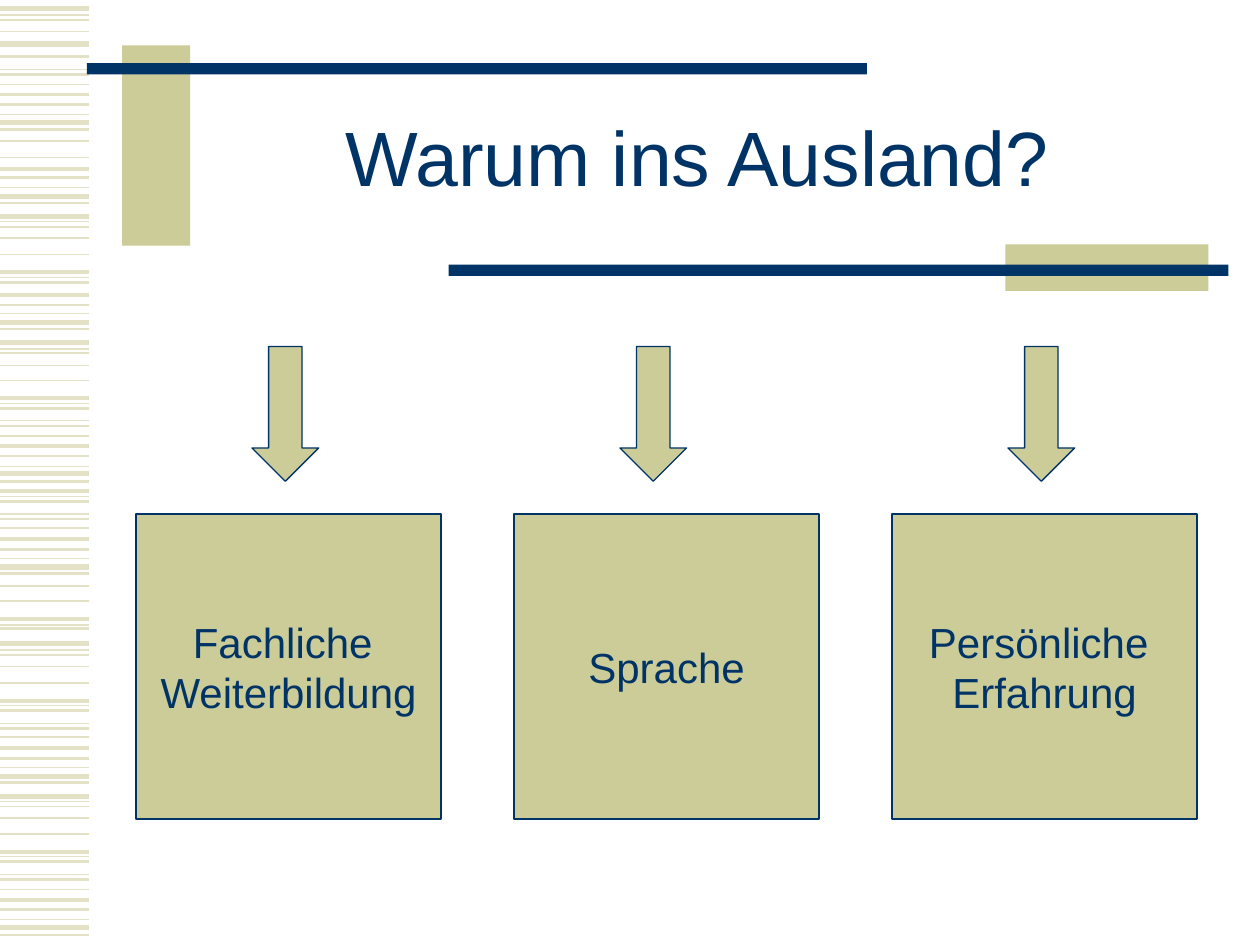
"""Builds a slide giving three reasons for going abroad."""
import lxml.etree
import pptx
import pptx.dml.color
import pptx.enum.shapes
import pptx.enum.text
import pptx.oxml.ns
import pptx.util

SLIDE_WIDTH, SLIDE_HEIGHT = 10, 7.5
NAVY, KHAKI, PALE = "003366", "CCCC99", "E3E2C7"
FONT = "Arial"
TITLE = "Warum ins Ausland?"
REASONS = [("Fachliche \nWeiterbildung", 2), ("Sprache", 4.92), ("Persönliche \nErfahrung", 8)]
COLUMN_LEFT, COLUMN_STEP = 1.08, 3
BOX_TOP, BOX_SIZE = 4.08, 2.42
ARROW_TOP, ARROW_WIDTH, ARROW_HEIGHT = 2.75, 0.53, 1.07
BARS = [
    (0.97, 0.36, 0.54, 1.59, KHAKI),
    (0.69, 0.5, 6.19, 0.09, NAVY),
    (7.98, 1.94, 1.61, 0.37, KHAKI),
    (3.56, 2.1, 6.19, 0.09, NAVY),
]
STRIPE_LENGTH = 0.71
STRIPES_BY_WEIGHT = {
    0.75: [0.12, 0.55, 0.91, 1.49, 1.76, 2.2, 2.49, 2.77, 3.2, 3.34, 3.7, 3.94,
           4.08, 4.43, 4.96, 5.16, 5.6, 5.74, 6.09, 6.36, 6.8, 6.94, 7.3],
    1: [0.16, 0.25, 0.67, 1.12, 1.25, 1.8, 1.89, 2.02, 2.8, 2.9, 3.02, 3.46,
        4.19, 4.65, 4.77, 5.2, 5.29, 5.42, 5.85, 6.4, 6.49, 6.62, 7.06],
    1.5: [0.45, 0.59, 0.83, 1.03, 1.41, 1.61, 2.24, 2.42, 2.61, 3.24, 3.38, 3.62, 3.82,
          3.98, 4.12, 4.36, 4.55, 4.99, 5.64, 5.78, 6.02, 6.21, 6.84, 6.98, 7.22, 7.42],
    2.25: [0.75, 1.34, 2.16, 2.34, 3.16, 3.54, 3.9, 4.28, 4.91, 5.56, 5.94, 6.76, 7.14],
    3: [0.07, 0.35, 0.97, 1.56, 1.72, 2.56, 2.72, 3.76, 4.5, 5.11, 6.16, 6.32, 7.36],
}
RECTANGLE = pptx.enum.shapes.MSO_SHAPE.RECTANGLE
DOWN_ARROW = pptx.enum.shapes.MSO_SHAPE.DOWN_ARROW


def color(hex_string):
    """Return the colour for a hex string."""
    return pptx.dml.color.RGBColor.from_string(hex_string)


def inches(*lengths):
    """Convert lengths in inches to slide units."""
    return [pptx.util.Inches(length) for length in lengths]


def set_line(line, hex_string, weight):
    """Set the colour and weight of a line."""
    line.color.rgb = color(hex_string)
    line.width = pptx.util.Pt(weight)


def add_stripe(slide, top, weight):
    """Draw one stripe at the left edge."""
    stripe = slide.shapes.add_connector(
        pptx.enum.shapes.MSO_CONNECTOR.STRAIGHT, *inches(0, top, STRIPE_LENGTH, top))
    set_line(stripe.line, PALE, weight)
    properties = stripe._element.find(pptx.oxml.ns.qn("p:spPr"))
    lxml.etree.SubElement(properties, pptx.oxml.ns.qn("a:effectLst"))


def add_filled(slide, kind, frame, fill, outline=None):
    """Add a filled shape with an optional thin outline."""
    shape = slide.shapes.add_shape(kind, *inches(*frame))
    shape.shadow.inherit = False
    shape.fill.solid()
    shape.fill.fore_color.rgb = color(fill)
    if outline:
        set_line(shape.line, outline, 0.75)
    else:
        shape.line.fill.background()
    return shape


def write(shape, text, size, wrap, spacing=None):
    """Write centred navy text into a shape."""
    frame = shape.text_frame
    frame.text = text
    frame.word_wrap = wrap
    frame.vertical_anchor = pptx.enum.text.MSO_ANCHOR.MIDDLE
    for paragraph in frame.paragraphs:
        paragraph.alignment = pptx.enum.text.PP_ALIGN.CENTER
        paragraph.line_spacing = spacing
        for run in paragraph.runs:
            run.font.name = FONT
            run.font.size = pptx.util.Pt(size)
            run.font.color.rgb = color(NAVY)


def main():
    """Build and save the slide."""
    deck = pptx.Presentation()
    deck.slide_width, deck.slide_height = inches(SLIDE_WIDTH, SLIDE_HEIGHT)
    slide = deck.slides.add_slide(deck.slide_layouts[6])
    for weight, tops in STRIPES_BY_WEIGHT.items():
        for top in tops:
            add_stripe(slide, top, weight)
    for *frame, fill in BARS:
        add_filled(slide, RECTANGLE, frame, fill)
    title = slide.shapes.add_textbox(*inches(1.5, 0.67, 8.07, 1.25))
    write(title, TITLE, 44, True, 0.85)
    for column, (reason, arrow_left) in enumerate(REASONS):
        arrow_frame = (arrow_left, ARROW_TOP, ARROW_WIDTH, ARROW_HEIGHT)
        add_filled(slide, DOWN_ARROW, arrow_frame, KHAKI, NAVY)
        box_frame = (COLUMN_LEFT + column * COLUMN_STEP, BOX_TOP, BOX_SIZE, BOX_SIZE)
        box = add_filled(slide, RECTANGLE, box_frame, KHAKI, NAVY)
        write(box, reason, 24, False)
    deck.save("out.pptx")


if __name__ == "__main__":
    main()
